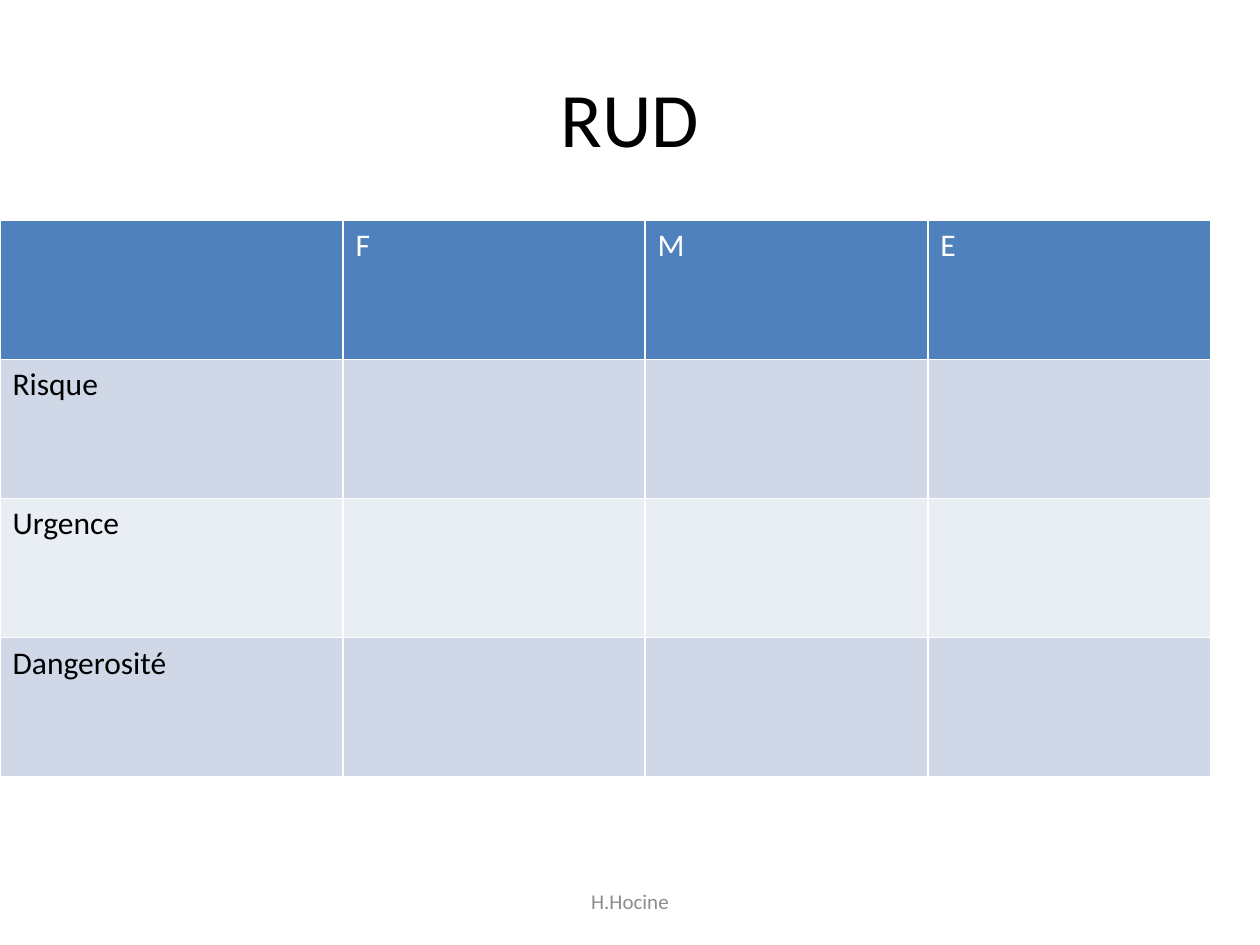
from dataclasses import dataclass

from pptx import Presentation
from pptx.dml.color import RGBColor
from pptx.enum.text import MSO_ANCHOR, PP_ALIGN
from pptx.util import Pt

MIDDLE = MSO_ANCHOR.MIDDLE
CENTER = PP_ALIGN.CENTER
EMU_PER_PX = 914400 / 126
TITLE_ONLY = 5


@dataclass(frozen=True)
class Theme:
    """Colours and type sizes of the deck."""
    font: str = "Calibri"
    ink: str = "000000"
    paper: str = "FFFFFF"
    muted: str = "8C8C8C"
    header: str = "4F81BD"
    bands: tuple = ("D0D8E8", "E9EDF4")
    title_size: int = 44
    table_size: int = 18
    footer_size: int = 12


THEME = Theme()
COLUMN_WIDTHS = (343, 302, 283, 283)
ROWS = (
    ("", "F", "M", "E"),
    ("Risque", "", "", ""),
    ("Urgence", "", "", ""),
    ("Dangerosité", "", "", ""),
)


def px(length):
    """Turn pixels into EMU."""
    return round(length * EMU_PER_PX)


def style_paragraph(para, size, color):
    """Set the font of a whole paragraph."""
    para.font.name = THEME.font
    para.font.size = Pt(size)
    para.font.bold = False
    para.font.color.rgb = RGBColor.from_string(color)


def write_centred(shape, text, size, color):
    """Write one centred line into a shape."""
    frame = shape.text_frame
    frame.word_wrap = True
    frame.vertical_anchor = MIDDLE
    para = frame.paragraphs[0]
    para.text = text
    para.alignment = CENTER
    style_paragraph(para, size, color)


def add_title(page, box, text):
    """Place and fill the title placeholder."""
    title = page.shapes.title
    title.left, title.top, title.width, title.height = map(px, box)
    write_centred(title, text, THEME.title_size, THEME.ink)


def add_footer(page, box, text):
    """Add the footer line."""
    footer = page.shapes.add_textbox(*map(px, box))
    write_centred(footer, text, THEME.footer_size, THEME.muted)


def add_grid(page, box, rows, column_widths):
    """Add the banded table with a coloured header row."""
    table = page.shapes.add_table(len(rows), len(column_widths), *map(px, box)).table
    for column, width in zip(table.columns, column_widths):
        column.width = px(width)
    for index, texts in enumerate(rows):
        fill = THEME.bands[(index - 1) % 2] if index else THEME.header
        color = THEME.ink if index else THEME.paper
        for cell, text in zip(table.rows[index].cells, texts):
            cell.fill.solid()
            cell.fill.fore_color.rgb = RGBColor.from_string(fill)
            cell.text = text
            style_paragraph(cell.text_frame.paragraphs[0], THEME.table_size, color)


def main():
    """Build and save the deck."""
    deck = Presentation()
    deck.slide_width, deck.slide_height = px(1260), px(945)
    page = deck.slides.add_slide(deck.slide_layouts[TITLE_ONLY])
    add_title(page, (63, 38, 1134, 157), "RUD")
    add_grid(page, (0, 220, sum(COLUMN_WIDTHS), 557), ROWS, COLUMN_WIDTHS)
    add_footer(page, (430, 876, 400, 50), "H.Hocine")
    deck.save("out.pptx")


if __name__ == "__main__":
    main()
